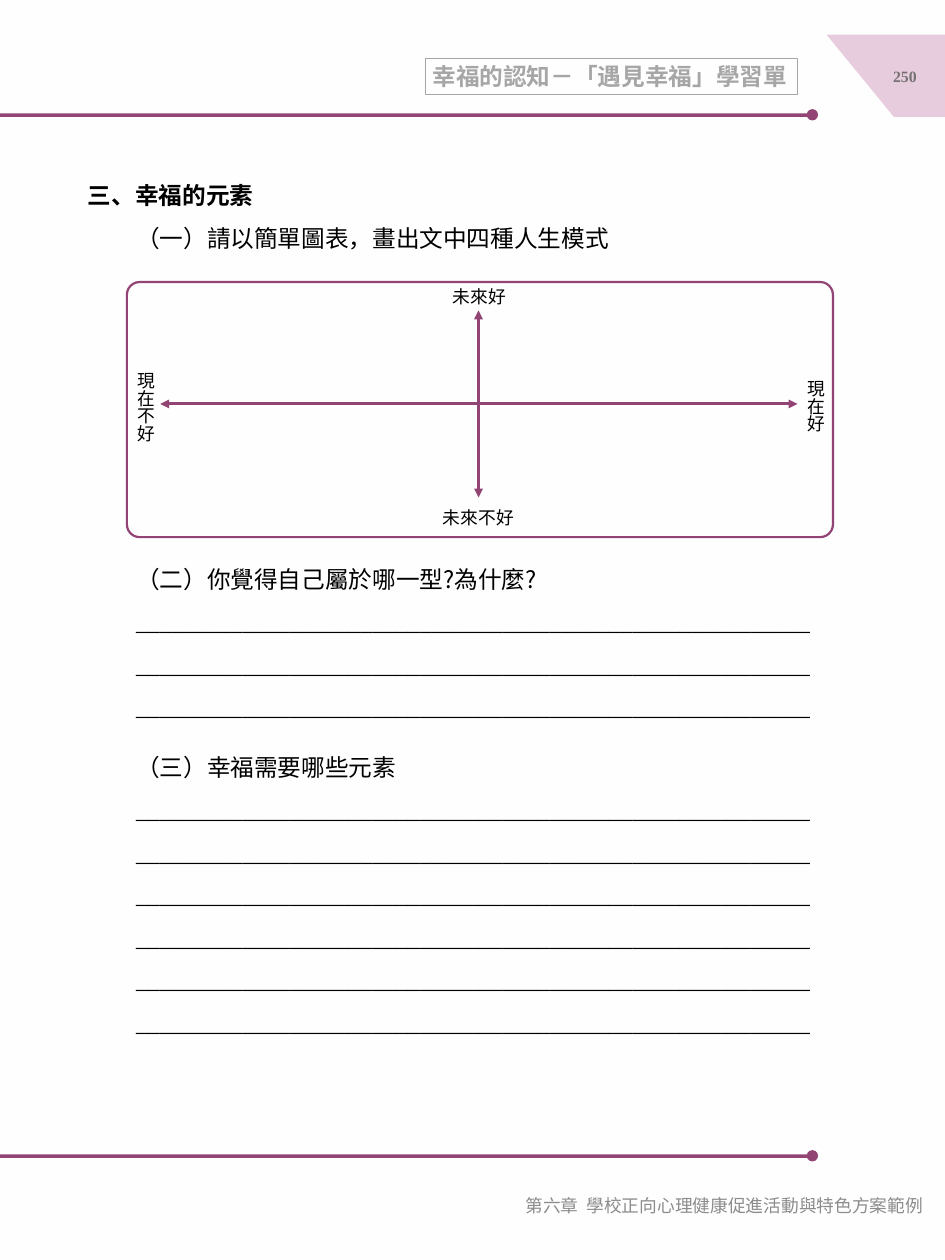
"""Build the worksheet page on the elements of happiness."""
import dataclasses
import typing

import lxml.etree
import pptx
import pptx.dml.color
import pptx.enum.shapes
import pptx.enum.text
import pptx.oxml.ns
import pptx.util

Inches = pptx.util.Inches
Pt = pptx.util.Pt
qn = pptx.oxml.ns.qn
Shape = pptx.enum.shapes.MSO_SHAPE
Align = pptx.enum.text.PP_ALIGN
Anchor = pptx.enum.text.MSO_ANCHOR


@dataclasses.dataclass(frozen=True)
class Theme:
    paper: str = "FEFEFE"
    plum: str = "924474"
    pink: str = "E7CCDD"
    frame: str = "A6A6A6"
    number: str = "767171"
    footer: str = "8C8C8C"
    ink: str = "000000"
    serif: str = "Times New Roman"
    sans: str = "Noto Sans CJK SC"
    body: float = 24
    label: float = 18
    page: float = 16
    pitch: float = 43.25
    indent: float = 0.68


class Box(typing.NamedTuple):
    left: float
    top: float
    width: float
    height: float


class Label(typing.NamedTuple):
    text: str
    box: Box
    vertical: bool = False


class Item(typing.NamedTuple):
    text: str
    font: str
    before: float = 0
    heading: bool = False


class Axis(typing.NamedTuple):
    x1: float
    y1: float
    x2: float
    y2: float


T = Theme()
RULE = Item("_" * 57, T.serif)
ITEMS = [
    Item("三、幸福的元素", T.sans, heading=True),
    Item("（一）請以簡單圖表，畫出文中四種人生模式", T.sans),
    Item("（二）你覺得自己屬於哪一型?為什麼?", T.sans, before=7 * T.pitch),
    *[RULE] * 3,
    Item("（三）幸福需要哪些元素", T.sans, before=18),
    *[RULE] * 6,
]
LABELS = [
    Label("未來好", Box(6.29, 3.98, 0.96, 0.4)),
    Label("未來不好", Box(6.15, 7.1, 1.21, 0.4)),
    Label("現在不好", Box(1.75, 5.15, 0.5, 1.11), True),
    Label("現在好", Box(11.21, 5.26, 0.5, 0.86), True),
]
AXES = [Axis(2.26, 5.7, 11.25, 5.7), Axis(6.75, 7.02, 6.75, 4.38)]
BAR_TOPS = [1.6, 16.29]


def rgb(color: str) -> pptx.dml.color.RGBColor:
    return pptx.dml.color.RGBColor.from_string(color)


def apply(target: typing.Any, values: dict[str, typing.Any]) -> None:
    for name, value in values.items():
        setattr(target, name, value)


def place(sp: typing.Any, box: Box) -> None:
    apply(sp, {name: Inches(value) for name, value in box._asdict().items()})


def write(p: typing.Any, text: str, size: float, font: str, color: str, bold: bool = False) -> None:
    r = p.add_run()
    r.text = text
    apply(r.font, {"size": Pt(size), "bold": bold, "name": font})
    r.font.color.rgb = rgb(color)
    lxml.etree.SubElement(r._r.get_or_add_rPr(), qn("a:ea"), typeface=T.sans)


def frame_text(sp: typing.Any, wrap: bool, anchor: typing.Any) -> typing.Any:
    tf = sp.text_frame
    apply(tf, {"word_wrap": wrap, "vertical_anchor": anchor,
               "auto_size": pptx.enum.text.MSO_AUTO_SIZE.NONE})
    return tf


def add_filled(s: typing.Any, kind: typing.Any, box: Box, color: str) -> None:
    sp = s.shapes.add_shape(kind, *map(Inches, box))
    sp.shadow.inherit = False
    sp.fill.solid()
    sp.fill.fore_color.rgb = rgb(color)
    sp.line.fill.background()


def add_text(s: typing.Any, box: Box, text: str, size: float, font: str, color: str,
             align: typing.Any = Align.LEFT, anchor: typing.Any = Anchor.TOP,
             wrap: bool = True, bold: bool = False) -> typing.Any:
    sp = s.shapes.add_textbox(*map(Inches, box))
    p = frame_text(sp, wrap, anchor).paragraphs[0]
    p.alignment = align
    write(p, text, size, font, color, bold)
    return sp


def add_page_frame(s: typing.Any) -> None:
    for top in BAR_TOPS:
        add_filled(s, Shape.RECTANGLE, Box(0, top, 11.39, 0.05), T.plum)
        add_filled(s, Shape.OVAL, Box(11.38, top - 0.06, 0.16, 0.16), T.plum)
    corner = s.shapes.build_freeform(Inches(13.33), Inches(0.49), scale=1.0)
    points = [(11.66, 0.49), (12.61, 1.65), (13.33, 1.65)]
    corner.add_line_segments([(Inches(x), Inches(y)) for x, y in points], close=True)
    sp = corner.convert_to_shape()
    sp.shadow.inherit = False
    sp.fill.solid()
    sp.fill.fore_color.rgb = rgb(T.pink)
    sp.line.fill.background()
    add_text(s, Box(12.41, 0.6, 0.71, 0.95), "250", T.page, T.serif, T.number,
             Align.CENTER, Anchor.MIDDLE, bold=True)
    add_text(s, Box(6.43, 16.73, 6.69, 0.57), "第六章  學校正向心理健康促進活動與特色方案範例",
             T.label, T.serif, T.footer, Align.RIGHT, Anchor.MIDDLE)


def fill_title(sp: typing.Any) -> None:
    place(sp, Box(6, 0.83, 5.25, 0.5))
    sp.line.color.rgb = rgb(T.frame)
    sp.line.width = Pt(0.75)
    p = frame_text(sp, False, Anchor.MIDDLE).paragraphs[0]
    p.alignment = Align.LEFT
    write(p, "幸福的認知－「遇見幸福」學習單", T.body, T.serif, T.frame, True)


def fill_body(sp: typing.Any) -> None:
    place(sp, Box(1.14, 2.29, 11.05, 12.4))
    tf = frame_text(sp, True, Anchor.MIDDLE)
    for i, item in enumerate(ITEMS):
        p = tf.add_paragraph() if i else tf.paragraphs[0]
        apply(p, {"alignment": Align.LEFT, "line_spacing": Pt(T.pitch),
                  "space_before": Pt(item.before), "space_after": Pt(0)})
        pPr = p._p.get_or_add_pPr()
        pPr.set("marL", str(Inches(0 if item.heading else T.indent)))
        pPr.set("indent", "0")
        lxml.etree.SubElement(pPr, qn("a:buNone"))
        write(p, item.text, T.body, item.font, T.ink, item.heading)


def add_quadrants(s: typing.Any) -> None:
    sp = s.shapes.add_shape(Shape.ROUNDED_RECTANGLE, *map(Inches, Box(1.79, 3.98, 9.96, 3.6)))
    sp.adjustments[0] = 0.05
    sp.shadow.inherit = False
    sp.fill.background()
    sp.line.color.rgb = rgb(T.plum)
    sp.line.width = Pt(2.25)
    for axis in AXES:
        line = s.shapes.add_connector(pptx.enum.shapes.MSO_CONNECTOR.STRAIGHT, *map(Inches, axis))
        line.line.color.rgb = rgb(T.plum)
        line.line.width = Pt(3)
        for end in ("a:headEnd", "a:tailEnd"):
            lxml.etree.SubElement(line.line._get_or_add_ln(), qn(end), type="triangle")
        lxml.etree.SubElement(line._element.spPr, qn("a:effectLst"))
    for label in LABELS:
        sp = add_text(s, label.box, label.text, T.label, T.sans, T.ink, wrap=False)
        if label.vertical:
            sp.text_frame._txBody.bodyPr.set("vert", "eaVert")


def main() -> None:
    prs = pptx.Presentation()
    apply(prs, {"slide_width": Inches(13.33), "slide_height": Inches(17.78)})
    s = prs.slides.add_slide(prs.slide_layouts[1])
    s.background.fill.solid()
    s.background.fill.fore_color.rgb = rgb(T.paper)
    add_page_frame(s)
    fill_title(s.shapes.title)
    fill_body(s.placeholders[1])
    add_quadrants(s)
    prs.save("out.pptx")


if __name__ == "__main__":
    main()
